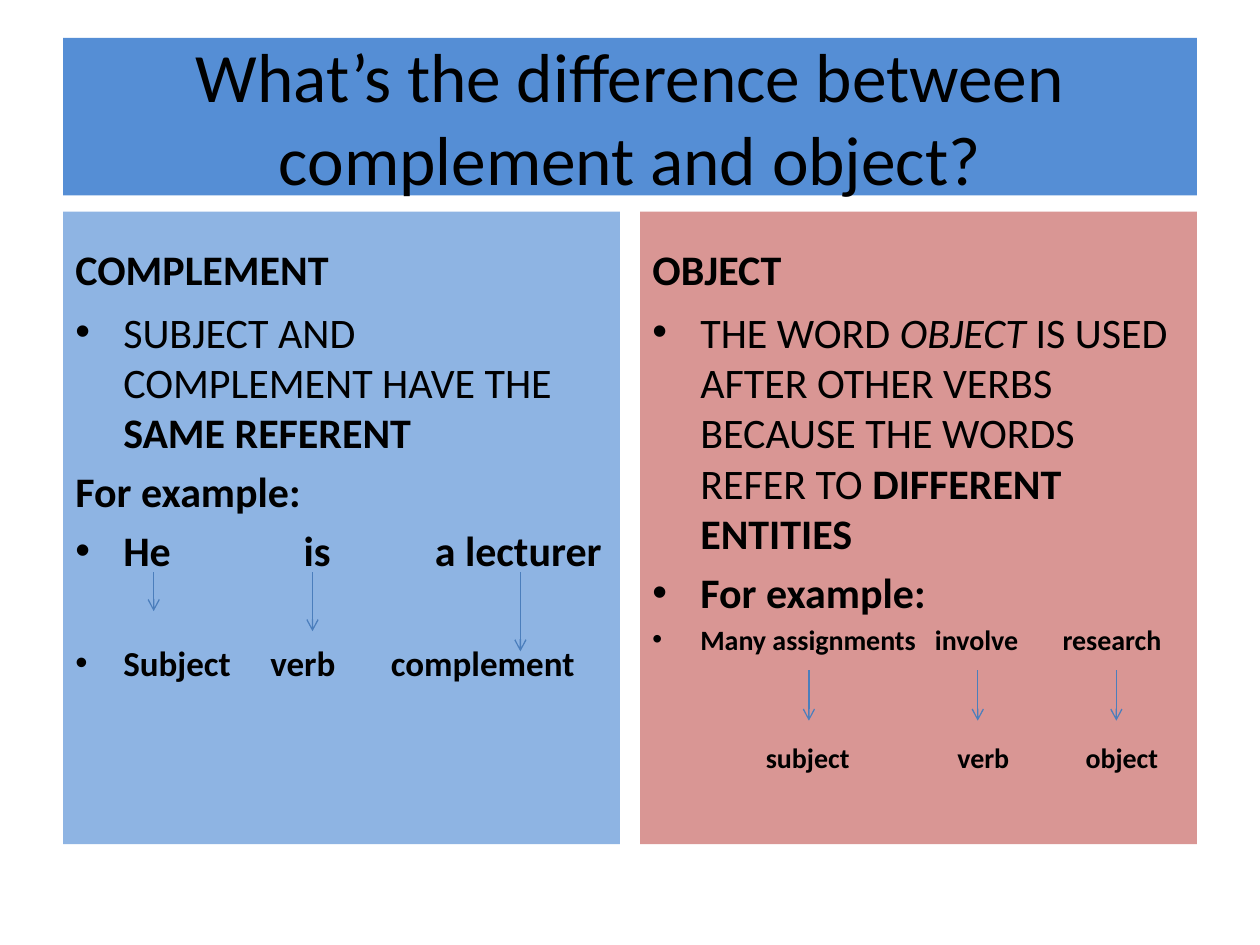
from dataclasses import dataclass

from lxml import etree
from pptx import Presentation
from pptx.dml.color import RGBColor
from pptx.enum import shapes, text
from pptx.oxml import ns
from pptx.util import Inches, Pt

FONT = "Calibri"
BLACK, TITLE_BLUE, ARROW_BLUE = "000000", "558ED5", "4B7EBC"
PANEL_TOP, HEADING_HEIGHT, BODY_HEIGHT, PANEL_WIDTH = 1.68, 0.7, 4.32, 4.42
HANGING = 0.38


@dataclass
class Run:
    text: str
    bold: bool = True
    italic: bool = False
    tracking: float = 0  # points added after each character


@dataclass
class Line:
    runs: list[Run]
    size: float = 24
    bullet: bool = True
    indent: float = 0
    before: float | None = None  # points; a fifth of the size when not given


@dataclass
class Panel:
    left: float
    color: str
    heading: str
    lines: list[Line]


@dataclass
class Arrow:
    x: float
    top: float
    bottom: float


def spaced(words: list[str], gaps: list[float]) -> list[Run]:
    """Words of one sentence, with widened spaces between them."""
    runs = [Run(words[0])]
    for word, gap in zip(words[1:], gaps):
        runs += [Run(" ", tracking=gap), Run(word)]
    return runs


PANELS = [
    Panel(0.5, "8EB4E3", "COMPLEMENT", [
        Line([Run("SUBJECT AND COMPLEMENT HAVE THE ", bold=False), Run("SAME REFERENT")]),
        Line([Run("For example:")], bullet=False),
        Line(spaced(["He", "is", "a lecturer"], [70.5, 54])),
        Line(spaced(["Subject", "verb", "complement"], [18, 27]), size=20, before=38),
    ]),
    Panel(5.08, "D99694", "OBJECT", [
        Line([
            Run("THE WORD ", bold=False),
            Run("OBJECT", bold=False, italic=True),
            Run(" IS USED AFTER OTHER VERBS BECAUSE THE WORDS REFER TO ", bold=False),
            Run("DIFFERENT ENTITIES"),
        ]),
        Line([Run("For example:")]),
        Line(spaced(["Many assignments", "involve", "research"], [7.2, 21.7]), size=16),
        Line(spaced(["subject", "verb", "object"], [58, 40]), size=16,
             bullet=False, indent=0.9, before=48),
    ]),
]
ARROWS = [Arrow(1.22, 4.54, 4.85), Arrow(2.48, 4.54, 5.01), Arrow(4.13, 4.54, 5.17)]
ARROWS += [Arrow(x, 5.32, 5.72) for x in (6.42, 7.76, 8.86)]


def rgb(color: str) -> RGBColor:
    return RGBColor.from_string(color)


def fill_shape(shape, color: str) -> None:
    shape.fill.solid()
    shape.fill.fore_color.rgb = rgb(color)


def add_text(paragraph, content: str, *, size: float, bold: bool = False,
             italic: bool = False, tracking: float = 0) -> None:
    run = paragraph.add_run()
    run.text = content
    font = run.font
    font.name, font.size, font.bold, font.italic = FONT, Pt(size), bold, italic
    font.color.rgb = rgb(BLACK)
    if tracking:
        run._r.get_or_add_rPr().set("spc", str(round(tracking * 100)))


def set_bullet(paragraph) -> None:
    properties = paragraph._p.get_or_add_pPr()
    properties.set("marL", str(Inches(HANGING)))
    properties.set("indent", str(-Inches(HANGING)))
    etree.SubElement(properties, ns.qn("a:buFont")).set("typeface", "Arial")
    etree.SubElement(properties, ns.qn("a:buChar")).set("char", "•")


def add_block(slide, left: float, top: float, height: float, color: str,
              lines: list[Line], anchor: text.MSO_ANCHOR) -> None:
    """Coloured text box of panel width."""
    box = slide.shapes.add_textbox(Inches(left), Inches(top),
                                   Inches(PANEL_WIDTH), Inches(height))
    fill_shape(box, color)
    frame = box.text_frame
    frame.word_wrap = True
    frame.vertical_anchor = anchor
    for index, line in enumerate(lines):
        paragraph = frame.add_paragraph() if index else frame.paragraphs[0]
        paragraph.space_before = Pt(line.size * 0.2 if line.before is None else line.before)
        if line.bullet:
            set_bullet(paragraph)
        elif line.indent:
            paragraph._p.get_or_add_pPr().set("marL", str(Inches(line.indent)))
        for run in line.runs:
            add_text(paragraph, run.text, size=line.size, bold=run.bold,
                     italic=run.italic, tracking=run.tracking)


def add_panel(slide, panel: Panel) -> None:
    heading = Line([Run(panel.heading)], bullet=False)
    add_block(slide, panel.left, PANEL_TOP, HEADING_HEIGHT, panel.color,
              [heading], text.MSO_ANCHOR.BOTTOM)
    add_block(slide, panel.left, PANEL_TOP + HEADING_HEIGHT, BODY_HEIGHT, panel.color,
              panel.lines, text.MSO_ANCHOR.TOP)


def add_arrow(slide, arrow: Arrow) -> None:
    connector = slide.shapes.add_connector(
        shapes.MSO_CONNECTOR.STRAIGHT, Inches(arrow.x), Inches(arrow.top),
        Inches(arrow.x), Inches(arrow.bottom))
    connector.line.color.rgb = rgb(ARROW_BLUE)
    connector.line.width = Pt(0.75)
    outline = connector.line._get_or_add_ln()
    etree.SubElement(outline, ns.qn("a:tailEnd")).set("type", "arrow")
    etree.SubElement(connector._element.spPr, ns.qn("a:effectLst"))


def add_title(slide, content: str) -> None:
    title = slide.shapes.title
    title.left, title.top = Inches(0.5), Inches(0.3)
    title.width, title.height = Inches(9), Inches(1.25)
    fill_shape(title, TITLE_BLUE)
    title.text_frame.vertical_anchor = text.MSO_ANCHOR.MIDDLE
    paragraph = title.text_frame.paragraphs[0]
    paragraph.alignment = text.PP_ALIGN.CENTER
    add_text(paragraph, content, size=39.6)


def main() -> None:
    presentation = Presentation()
    presentation.slide_width, presentation.slide_height = Inches(10), Inches(7.5)
    slide = presentation.slides.add_slide(presentation.slide_layouts[5])
    add_title(slide, "What’s the difference between complement and object?")
    for panel in PANELS:
        add_panel(slide, panel)
    for arrow in ARROWS:
        add_arrow(slide, arrow)
    presentation.save("out.pptx")


if __name__ == "__main__":
    main()
